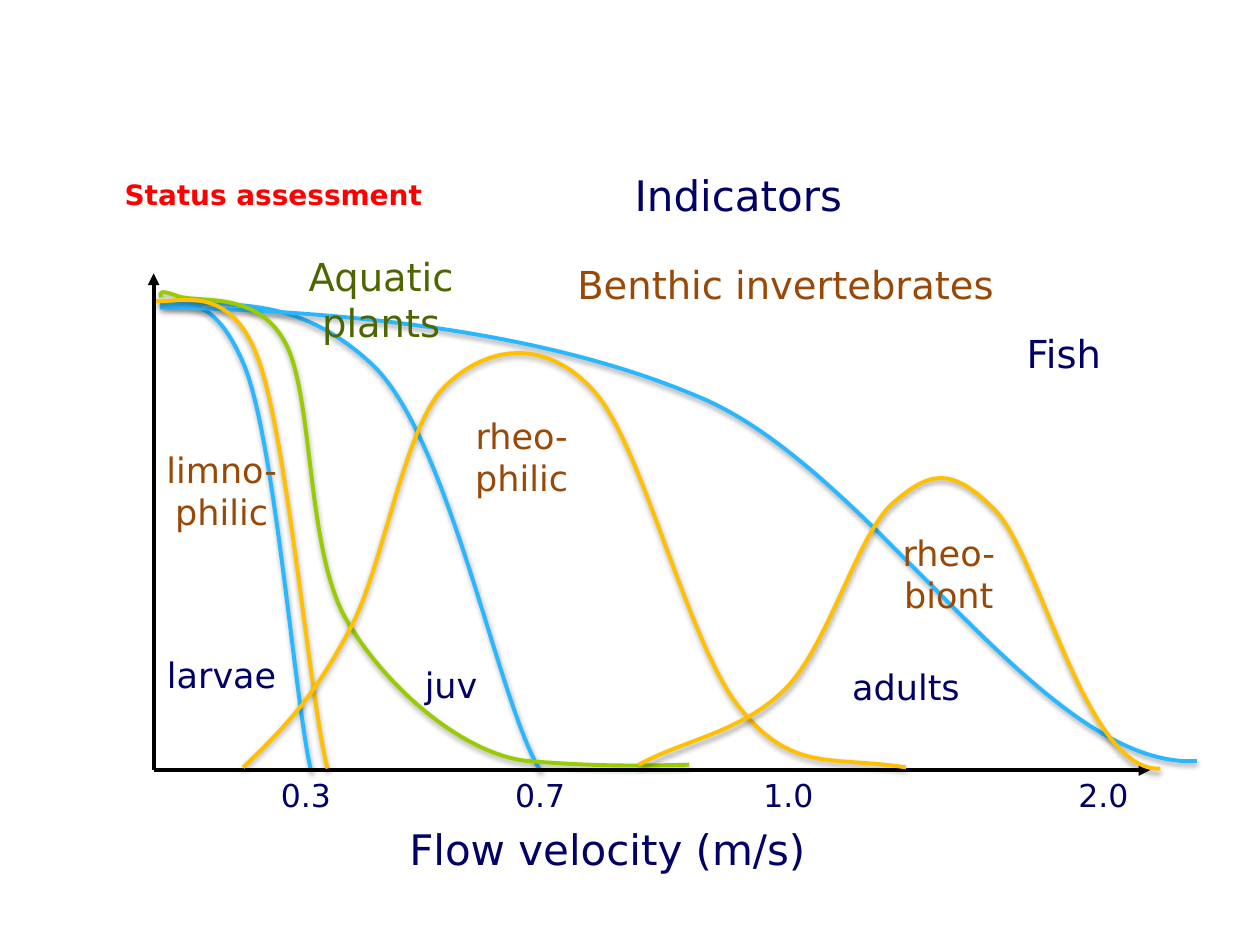
import pptx
import pptx.dml.color
import pptx.enum.text
import pptx.oxml
import pptx.oxml.ns
import pptx.util
from lxml import etree

Pt = pptx.util.Pt
ALIGN = pptx.enum.text.PP_ALIGN
FONT = "DejaVu Sans"
NAVY, BROWN, GREEN, RED, BLACK = "000066", "984807", "4D6600", "FF0000", "000000"
BLUE, LIME, AMBER = "29B8FF", "99CC00", "FFC000"

# Curves: start point, then control, control, end for every Bézier segment
FISH_CURVES = [
    (BLUE, [(91.4, 173.5), (104.4, 175.7), (121, 165.6), (139, 207.4),
            (157, 248.4), (168.5, 401.8), (177.8, 440.6)]),
    (BLUE, [(94.3, 173.5), (125.3, 175.7), (166.3, 165.6), (211.7, 207.4),
            (257, 248.4), (284.4, 401.8), (308.9, 440.6)]),
    (BLUE, [(91.4, 175.7), (173.5, 177.1), (303.8, 185), (402.5, 228.2),
            (501.1, 271.4), (596.2, 439.9), (684, 434.9)]),
]
OTHER_CURVES = [
    (LIME, [(92.2, 169.9), (91.4, 167.8), (90, 164.9), (101.5, 169.2),
            (113.8, 173.5), (147.6, 165.6), (163.4, 196.6),
            (179.3, 227.5), (175, 314.6), (198, 354.2),
            (221, 393.8), (265.7, 431.3), (301.7, 434.9),
            (337.7, 437.8), (361.4, 437.8), (393.8, 437)]),
    (AMBER, [(89.3, 172.1), (101.5, 173.5), (131.8, 160.6), (147.6, 205.2),
             (164.2, 249.8), (177.1, 400.3), (187.2, 439.2)]),
    (AMBER, [(139, 438.5), (167, 411.8), (181.4, 394.6), (200.9, 357.8),
             (219.6, 321.8), (231.1, 242.6), (254.9, 220.3),
             (277.9, 198), (311, 192.2), (339.1, 223.2),
             (367.2, 253.4), (393.1, 369.4), (423.4, 405.4),
             (452.9, 441.4), (474.5, 432), (517.7, 438.5)]),
    (AMBER, [(365, 437), (391, 422.6), (424.8, 418.3), (449.3, 393.1),
             (473.8, 367.9), (490.3, 304.6), (510.5, 287.3),
             (530.6, 270), (542.9, 265.7), (568.1, 290.9),
             (594, 316.1), (619.9, 441.4), (663.1, 439.2)]),
]

# Axes
ORIGIN = (87.8, 440)
AXIS_ENDS = [(657.4, 440), (87.8, 156.2)]
TICKS = [("0.3", 175.7), ("0.7", 309.6), ("1.0", 451.4), ("2.0", 631.4)]
TICK_WIDTH, TICK_HEIGHT = 44.6, 29

# Group labels, all in boxes of one width: text, left, top, height, colour
GROUP_WIDTH = 70.6
GROUP_LABELS = [
    ("larvae", 91.4, 370, 31.7, NAVY),
    ("juv", 222.5, 375.8, 31.7, NAVY),
    ("adults", 482.4, 376.6, 31.7, NAVY),
    ("limno-philic", 91.4, 252.7, 55.4, BROWN),
    ("rheo-philic", 262.8, 233.3, 55.4, BROWN),
    ("rheo-biont", 506.9, 300.2, 55.4, BROWN),
]

# Headings: lines, box, size, colour, alignment, wrap
HEADINGS = [
    (["Indicators"], (185, 93.6, 473.8, 36), 24, NAVY, ALIGN.CENTER, True),
    (["Aquatic", "plants"], (169.2, 141.1, 97.2, 60.5), 22, GREEN, ALIGN.CENTER, False),
    (["Benthic invertebrates"], (320.4, 145.4, 257, 33.8), 22, BROWN, ALIGN.CENTER, True),
    (["Fish"], (579.6, 185, 59, 33.8), 22, NAVY, ALIGN.LEFT, False),
    (["Flow velocity (m/s)"], (226.8, 467.3, 249.1, 36), 24, NAVY, ALIGN.LEFT, False),
]


def color(value):
    return pptx.dml.color.RGBColor.from_string(value)


def child(parent, tag, **attributes):
    return etree.SubElement(parent, pptx.oxml.ns.qn(tag), attributes)


def style_line(shape, value):
    shape.line.color.rgb = color(value)
    shape.line.width = Pt(2.25)


def write(frame, lines, size, value, align, bold=False):
    for index, line in enumerate(lines):
        paragraph = frame.paragraphs[0] if index == 0 else frame.add_paragraph()
        paragraph.alignment = align
        run = paragraph.add_run()
        run.text = line
        run.font.name = FONT
        run.font.size = Pt(size)
        run.font.bold = bold
        run.font.color.rgb = color(value)


def add_label(slide, lines, box, size, value, align=ALIGN.CENTER, wrap=True, side=7.2):
    frame = slide.shapes.add_textbox(*map(Pt, box)).text_frame
    frame.word_wrap = wrap
    frame.auto_size = pptx.enum.text.MSO_AUTO_SIZE.SHAPE_TO_FIT_TEXT
    frame.margin_left = frame.margin_right = Pt(side)
    frame.margin_top = frame.margin_bottom = Pt(3.6)
    write(frame, lines, size, value, align)


def bezier(a, b, c, d, t):
    u = 1 - t
    return tuple(Pt(u**3 * p + 3 * u * u * t * q + 3 * u * t * t * r + t**3 * s)
                 for p, q, r, s in zip(a, b, c, d))


def add_curve(slide, value, points):
    # Sampled points give the true bounds of the curve
    segments = [points[i:i + 4] for i in range(0, len(points) - 1, 3)]
    samples = [bezier(*segment, step / 20) for segment in segments for step in range(1, 21)]
    builder = slide.shapes.build_freeform(*map(Pt, points[0]), scale=1.0)
    builder.add_line_segments(samples, close=False)
    shape = builder.convert_to_shape()

    # Exact Bézier segments take the place of the sampled lines
    outline = next(shape._element.iter(pptx.oxml.ns.qn("a:path")))
    for line in outline.findall(pptx.oxml.ns.qn("a:lnTo")):
        outline.remove(line)
    for segment in segments:
        curve = child(outline, "a:cubicBezTo")
        for x, y in segment[1:]:
            child(curve, "a:pt", x=str(Pt(x) - shape.left), y=str(Pt(y) - shape.top))

    shape.fill.background()
    style_line(shape, value)
    shape.shadow.inherit = False
    effects = shape._element.spPr.find(pptx.oxml.ns.qn("a:effectLst"))
    shadow = child(effects, "a:outerShdw", blurRad=str(Pt(3.1)), dist=str(Pt(1.8)),
                   dir="5400000", rotWithShape="0")
    child(child(shadow, "a:srgbClr", val=BLACK), "a:alpha", val="35000")


def add_axis(slide, end):
    axis = slide.shapes.add_connector(1, *map(Pt, ORIGIN + end))
    style_line(axis, BLACK)
    child(axis.line._get_or_add_ln(), "a:tailEnd", type="triangle")
    child(axis._element.spPr, "a:effectLst")


def main():
    presentation = pptx.Presentation()
    presentation.slide_width, presentation.slide_height = Pt(720), Pt(540)
    slide = presentation.slides.add_slide(presentation.slide_layouts[5])

    # Title
    title = slide.shapes.title
    title.left, title.top, title.width, title.height = map(Pt, (64, 97.2, 390.2, 28))
    title.text_frame.vertical_anchor = pptx.enum.text.MSO_ANCHOR.MIDDLE
    title.text_frame.word_wrap = True
    write(title.text_frame, ["Status assessment"], 16, RED, ALIGN.LEFT, bold=True)

    # Curves and axes
    for value, points in FISH_CURVES:
        add_curve(slide, value, points)
    for end in AXIS_ENDS:
        add_axis(slide, end)
    for value, points in OTHER_CURVES:
        add_curve(slide, value, points)

    # Labels
    for text, center in TICKS:
        box = (center - TICK_WIDTH / 2, ORIGIN[1], TICK_WIDTH, TICK_HEIGHT)
        add_label(slide, [text], box, 18, NAVY, ALIGN.LEFT, wrap=False)
    for text, left, top, height, value in GROUP_LABELS:
        add_label(slide, [text], (left, top, GROUP_WIDTH, height), 20, value, side=0)
    for heading in HEADINGS:
        add_label(slide, *heading)

    presentation.save("out.pptx")


if __name__ == "__main__":
    main()
